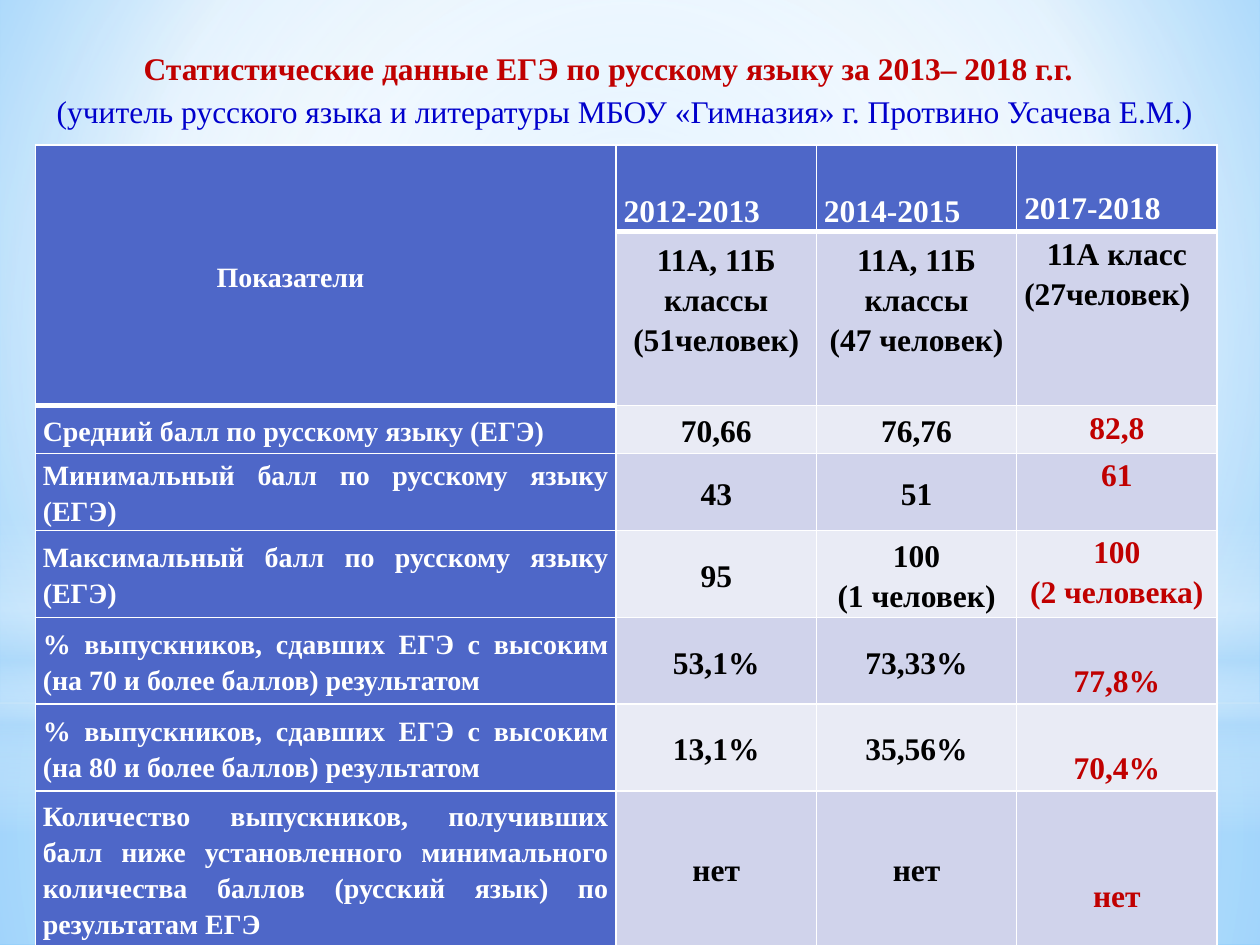
from dataclasses import dataclass
from typing import Optional

from lxml import etree
from pptx import Presentation
from pptx.dml.color import RGBColor
from pptx.enum.shapes import MSO_SHAPE
from pptx.enum.text import MSO_ANCHOR, MSO_AUTO_SIZE, PP_ALIGN
from pptx.oxml.ns import nsdecls, qn
from pptx.util import Inches, Pt

RECT, OVAL = MSO_SHAPE.RECTANGLE, MSO_SHAPE.OVAL
TOP, MIDDLE = MSO_ANCHOR.TOP, MSO_ANCHOR.MIDDLE
LEFT, CENTER, JUSTIFY = PP_ALIGN.LEFT, PP_ALIGN.CENTER, PP_ALIGN.JUSTIFY

WHITE = RGBColor(0xFF, 0xFF, 0xFF)
BLACK = RGBColor(0x00, 0x00, 0x00)
RED = RGBColor(0xC0, 0x00, 0x00)
BLUE = RGBColor(0x00, 0x00, 0xCC)
HEADER = RGBColor(0x4E, 0x67, 0xC8)
BAND_DARK = RGBColor(0xD0, 0xD3, 0xEB)
BAND_LIGHT = RGBColor(0xE9, 0xEB, 0xF5)
SKY = RGBColor(0x9E, 0xD5, 0xFF)
DEEP_SKY = RGBColor(0x5B, 0xB9, 0xFF)
MIST = RGBColor(0xB4, 0xDC, 0xFA)

FONT = "Times New Roman"
LINE = 0.33
COL_WIDTHS = (4.61, 1.59, 1.59, 1.59)
ROW_HEIGHTS = (0.69, 1.38, 0.38, 0.61, 0.69, 0.69, 0.69, 1.23)


@dataclass
class Gradient:
    stops: tuple
    center: Optional[tuple] = None


@dataclass
class Glow:
    shape: int
    top: float
    height: float
    gradient: Gradient


@dataclass
class Row:
    label: str
    values: tuple
    drop: int = 0


MIDDLE_POINT = (50, 50, 50, 50)
BACKDROP = Gradient(((0, SKY, 100), (60, WHITE, 100), (100, DEEP_SKY, 100)), (20, 10, 20, 60))
GLOWS = (
    Glow(RECT, 5.58, 1.92, Gradient(((0, WHITE, 91), (37, WHITE, 76), (100, MIST, 79)), MIDDLE_POINT)),
    Glow(RECT, 0, 5.58, Gradient(((0, WHITE, 89), (48, WHITE, 62), (100, MIST, 79)), MIDDLE_POINT)),
    Glow(RECT, 4.12, 2.5, Gradient(((0, WHITE, 0), (29, WHITE, 30), (45, MIST, 40),
                                    (55, WHITE, 26), (65, MIST, 60), (100, WHITE, 0)))),
    Glow(OVAL, 1.75, 5.58, Gradient(((0, WHITE, 100), (56, WHITE, 0)), MIDDLE_POINT)),
)

YEARS = ("2012-2013", "2014-2015", "2017-2018")
CLASSES = (
    ("11А, 11Б классы", "(51человек)"),
    ("11А, 11Б классы", "(47 человек)"),
    ("11А класс", "(27человек)"),
)
ROWS = (
    Row("Средний балл по русскому языку (ЕГЭ)", ("70,66", "76,76", "82,8")),
    Row("Минимальный балл по русскому языку (ЕГЭ)", ("43", "51", "61")),
    Row("Максимальный балл по русскому языку (ЕГЭ)",
        ("95", "100\n(1 человек)", "100\n(2 человека)")),
    Row("% выпускников, сдавших ЕГЭ с высоким (на 70 и более баллов) результатом",
        ("53,1%", "73,33%", "77,8%"), drop=1),
    Row("% выпускников, сдавших ЕГЭ с высоким (на 80 и более баллов) результатом",
        ("13,1%", "35,56%", "70,4%"), drop=1),
    Row("Количество выпускников, получивших балл ниже установленного минимального "
        "количества баллов (русский язык) по результатам ЕГЭ",
        ("нет", "нет", "нет"), drop=2),
)


def set_gradient(parent, gradient: Gradient) -> None:
    stops = "".join(
        f'<a:gs pos="{pos * 1000}"><a:srgbClr val="{color}">'
        f'<a:alpha val="{alpha * 1000}"/></a:srgbClr></a:gs>'
        for pos, color, alpha in gradient.stops)
    if gradient.center:
        l, t, r, b = (v * 1000 for v in gradient.center)
        shade = f'<a:path path="circle"><a:fillToRect l="{l}" t="{t}" r="{r}" b="{b}"/></a:path>'
    else:
        shade = '<a:lin ang="5400000" scaled="0"/>'
    xml = f'<a:gradFill {nsdecls("a")} rotWithShape="1"><a:gsLst>{stops}</a:gsLst>{shade}</a:gradFill>'
    parent.replace(parent.find(qn("a:solidFill")), etree.fromstring(xml))


def add_glow(slide, glow: Glow) -> None:
    sp = slide.shapes.add_shape(glow.shape, 0, Inches(glow.top), Inches(10), Inches(glow.height))
    sp.shadow.inherit = False
    sp.line.fill.background()
    sp.fill.solid()
    set_gradient(sp._element.spPr, glow.gradient)


def add_text(p, text: str, *, size: int = 18, color: RGBColor = BLACK,
             bold: bool = True, align: int = CENTER, indent: float = 0) -> None:
    p.alignment = align
    p.line_spacing = 1.15
    if indent:
        p._p.get_or_add_pPr().set("indent", str(Inches(indent)))
    r = p.add_run()
    r.text = text
    r.font.name = FONT
    r.font.size = Pt(size)
    r.font.bold = bold
    r.font.color.rgb = color


def fill_cell(cell, text: str, *, fill: RGBColor, anchor: int = MIDDLE,
              top: float = 0, bottom: float = 0, **fmt) -> None:
    cell.fill.solid()
    cell.fill.fore_color.rgb = fill
    cell.vertical_anchor = anchor
    cell.margin_left = cell.margin_right = Inches(0.06)
    cell.margin_top, cell.margin_bottom = Inches(top), Inches(bottom)
    tf = cell.text_frame
    for i, line in enumerate(text.split("\n")):
        add_text(tf.add_paragraph() if i else tf.paragraphs[0], line, **fmt)


def set_borders(cell, thick: str) -> None:
    tcPr = cell._tc.get_or_add_tcPr()
    for i, side in enumerate("LRTB"):
        width = Pt(3 if side in thick else 1)
        tcPr.insert(i, etree.fromstring(
            f'<a:ln{side} {nsdecls("a")} w="{width}"><a:solidFill>'
            f'<a:srgbClr val="{WHITE}"/></a:solidFill></a:ln{side}>'))


def add_title(slide) -> None:
    sp = slide.shapes.title
    sp.left, sp.top, sp.width, sp.height = Inches(0.35), Inches(0.29), Inches(9.45), Inches(0.8)
    tf = sp.text_frame
    tf.word_wrap = True
    tf.auto_size = MSO_AUTO_SIZE.NONE
    tf.vertical_anchor = TOP
    add_text(tf.paragraphs[0], "Статистические данные ЕГЭ по русскому языку за 2013– 2018 г.г.",
             color=RED, align=JUSTIFY, indent=0.69)
    add_text(tf.add_paragraph(),
             "(учитель русского языка и литературы МБОУ «Гимназия» г. Протвино Усачева Е.М.)",
             color=BLUE, bold=False, align=JUSTIFY)
    slide.shapes._spTree.append(sp._element)


def add_results(slide) -> None:
    table = slide.shapes.add_table(
        len(ROW_HEIGHTS), len(COL_WIDTHS), Inches(0.28), Inches(1.15),
        Inches(sum(COL_WIDTHS)), Inches(sum(ROW_HEIGHTS))).table
    for col, width in zip(table.columns, COL_WIDTHS):
        col.width = Inches(width)
    for row, height in zip(table.rows, ROW_HEIGHTS):
        row.height = Inches(height)

    table.cell(0, 0).merge(table.cell(1, 0))
    fill_cell(table.cell(0, 0), "Показатели", fill=HEADER, size=16, color=WHITE,
              align=JUSTIFY, indent=1.38)
    for c, (year, classes) in enumerate(zip(YEARS, CLASSES), 1):
        last = c == len(YEARS)
        anchor = TOP if last else MIDDLE
        fill_cell(table.cell(0, c), year, fill=HEADER, anchor=anchor, top=LINE,
                  color=WHITE, align=JUSTIFY)
        fill_cell(table.cell(1, c), "\n".join(classes), fill=BAND_DARK, anchor=anchor,
                  bottom=0 if last else LINE)
    table.cell(1, len(YEARS)).text_frame.paragraphs[1].alignment = LEFT

    for r, row in enumerate(ROWS, 2):
        band = BAND_DARK if r % 2 else BAND_LIGHT
        fill_cell(table.cell(r, 0), row.label, fill=HEADER, size=16, color=WHITE, align=JUSTIFY)
        *earlier, latest = row.values
        for c, value in enumerate(earlier, 1):
            fill_cell(table.cell(r, c), value, fill=band)
        fill_cell(table.cell(r, len(row.values)), latest, fill=band, anchor=TOP,
                  top=row.drop * LINE, color=RED)

    for r in range(len(ROW_HEIGHTS)):
        for c in range(len(COL_WIDTHS)):
            header_end = 0 if c else 1
            thick = "B" if r <= header_end else "T" if r == header_end + 1 else ""
            set_borders(table.cell(r, c), thick)


def main() -> None:
    prs = Presentation()
    prs.slide_width, prs.slide_height = Inches(10), Inches(7.5)
    slide = prs.slides.add_slide(prs.slide_layouts[5])
    slide.background.fill.solid()
    set_gradient(slide._element.find(".//" + qn("p:bgPr")), BACKDROP)
    for glow in GLOWS:
        add_glow(slide, glow)
    add_title(slide)
    add_results(slide)
    prs.save("out.pptx")


if __name__ == "__main__":
    main()
